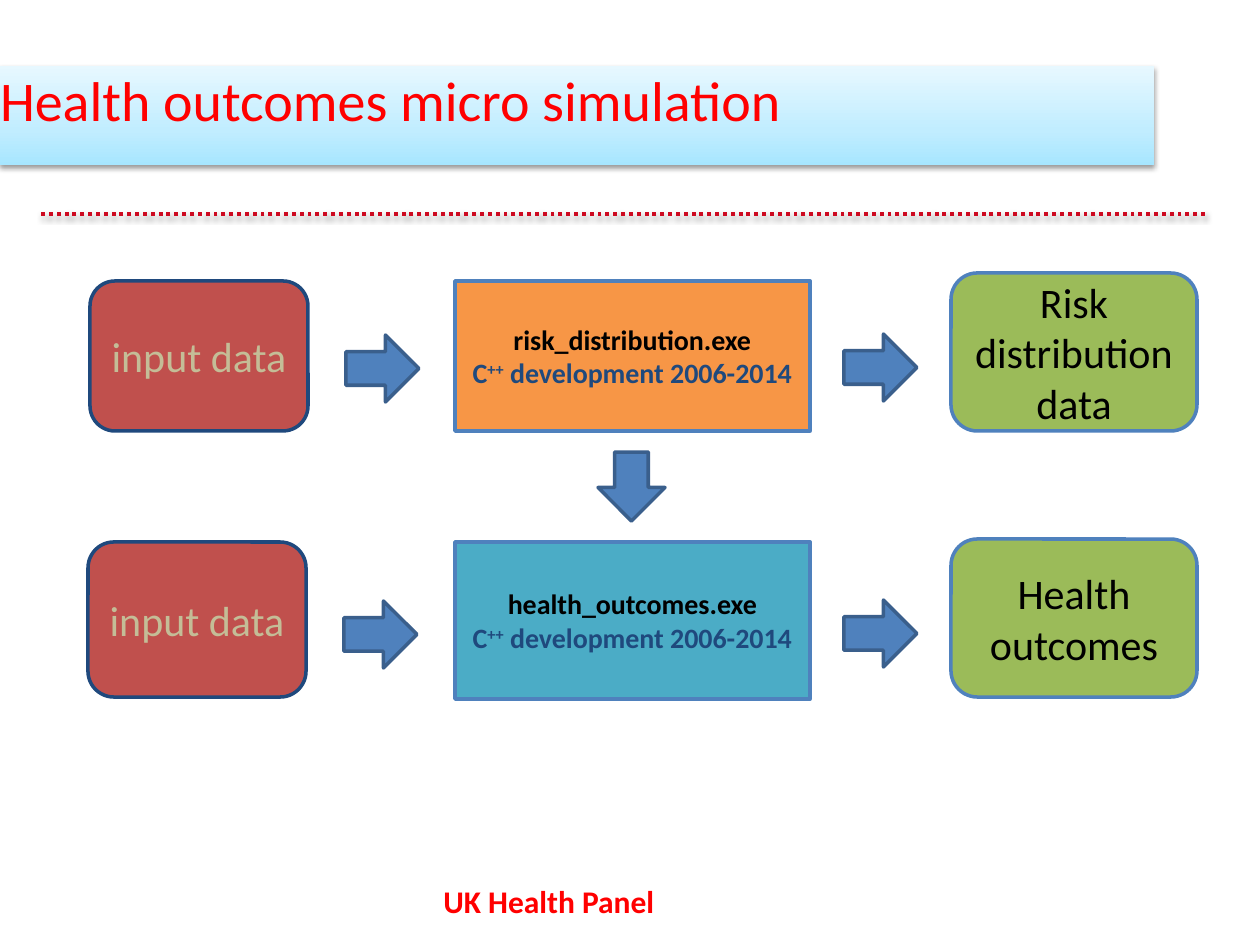
import pptx
import pptx.util
import pptx.dml.color
import pptx.oxml
import pptx.oxml.ns
from pptx.enum.dml import MSO_LINE
from pptx.enum.shapes import MSO_CONNECTOR, MSO_SHAPE
from pptx.enum.text import MSO_ANCHOR, MSO_AUTO_SIZE, PP_ALIGN

EMU_PER_PX = 914400 / 126
FONT = "Calibri"
RED, NAVY, BLUE, BLACK = "FF0000", "1F497D", "4F81BD", "000000"
ARROW_LINE = "3A5F8C"
NAMESPACE = pptx.oxml.ns.nsdecls("a")
SOFT_SHADOW = (
    f'<a:effectLst {NAMESPACE}><a:outerShdw blurRad="39370" dist="20320" dir="5400000" '
    'rotWithShape="0"><a:srgbClr val="000000"><a:alpha val="38000"/></a:srgbClr>'
    "</a:outerShdw></a:effectLst>"
)


def px(*lengths):
    return [pptx.util.Emu(round(length * EMU_PER_PX)) for length in lengths]


def color(value):
    return pptx.dml.color.RGBColor.from_string(value)


def format_font(font, size, value, bold=False):
    font.name = FONT
    font.size = pptx.util.Pt(size)
    font.bold = bold
    font.color.rgb = color(value)


def append_properties(shape, xml):
    shape._element.spPr.append(pptx.oxml.parse_xml(xml))


def add_block(slide, kind, box, fill, line):
    shape = slide.shapes.add_shape(kind, *px(*box))
    shape.shadow.inherit = False
    shape.fill.solid()
    shape.fill.fore_color.rgb = color(fill)
    shape.line.color.rgb = color(line)
    shape.line.width = pptx.util.Pt(2)
    return shape


def add_arrow(slide, kind, box):
    add_block(slide, kind, box, BLUE, ARROW_LINE)


def add_data_box(slide, box, text, fill, line, text_color):
    shape = add_block(slide, MSO_SHAPE.ROUNDED_RECTANGLE, box, fill, line)
    shape.text_frame.text = text
    shape.text_frame.vertical_anchor = MSO_ANCHOR.MIDDLE
    paragraph = shape.text_frame.paragraphs[0]
    paragraph.alignment = PP_ALIGN.CENTER
    format_font(paragraph.runs[0].font, 24, text_color)


def add_program(slide, box, name, fill):
    shape = add_block(slide, MSO_SHAPE.FLOWCHART_PROCESS, box, fill, BLUE)
    frame = shape.text_frame
    frame.vertical_anchor = MSO_ANCHOR.MIDDLE
    frame.text = name
    language = frame.add_paragraph()
    for text in ("C", "++", " development 2006-2014"):
        language.add_run().text = text
    for paragraph, value in zip(frame.paragraphs, (BLACK, NAVY)):
        paragraph.alignment = PP_ALIGN.CENTER
        for run in paragraph.runs:
            format_font(run.font, 16, value, bold=True)
    language.runs[1].font._element.set("baseline", "30000")


def add_title(slide, box):
    title = slide.shapes.title
    title.left, title.top, title.width, title.height = px(*box)
    stops = "".join(
        f'<a:gs pos="{position}000"><a:srgbClr val="{value}"/></a:gs>'
        for position, value in ((0, "A7E6FF"), (35, "C1EDFF"), (100, "E7F8FF"))
    )
    append_properties(
        title,
        f"<a:gradFill {NAMESPACE}><a:gsLst>{stops}</a:gsLst>"
        '<a:lin ang="16200000" scaled="0"/></a:gradFill>',
    )
    append_properties(title, SOFT_SHADOW)
    frame = title.text_frame
    frame.text = "Health outcomes micro simulation"
    frame.auto_size = MSO_AUTO_SIZE.NONE
    frame.vertical_anchor = MSO_ANCHOR.TOP
    frame.margin_left = frame.margin_right = frame.margin_top = frame.margin_bottom = 0
    frame.paragraphs[0].alignment = PP_ALIGN.LEFT
    format_font(frame.paragraphs[0].runs[0].font, 32, RED)


def add_divider(slide, left, right, y):
    divider = slide.shapes.add_connector(MSO_CONNECTOR.STRAIGHT, *px(right, y, left, y))
    divider.line.color.rgb = color("CD0920")
    divider.line.width = pptx.util.Pt(2.25)
    divider.line.dash_style = MSO_LINE.ROUND_DOT
    append_properties(divider, SOFT_SHADOW)


def add_stage(slide, left, top, input_box, arrow_tops, program, program_height,
              program_fill, result, result_top, result_height):
    """One row: input data, program and result, joined by arrows."""
    input_left, input_height = input_box
    add_data_box(slide, (left + input_left, top, 218, input_height), "input data",
                 "C0504D", NAVY, "C4BD97")
    add_program(slide, (left + 367, top, 355, program_height), program, program_fill)
    add_data_box(slide, (left + 863, top + result_top, 246, result_height), result,
                 "9BBB59", BLUE, BLACK)
    for arrow_left, arrow_top in zip((input_left + 256, 756), arrow_tops):
        add_arrow(slide, MSO_SHAPE.RIGHT_ARROW,
                  (left + arrow_left, top + arrow_top, 73, 67))


def add_footer(slide, box):
    footer = slide.shapes.add_textbox(*px(*box))
    footer.text_frame.word_wrap = True
    footer.text_frame.text = "UK Health Panel"
    format_font(footer.text_frame.paragraphs[0].runs[0].font, 18, RED, bold=True)


def main():
    presentation = pptx.Presentation()
    presentation.slide_width, presentation.slide_height = px(1260, 945)
    slide = presentation.slides.add_slide(presentation.slide_layouts[5])
    add_divider(slide, 40, 1205, 214)
    add_title(slide, (0, 66, 1154, 99))
    add_stage(slide, 88, 281, (2, 150), (54, 53), "risk_distribution.exe", 150,
              "F79646", "Risk distribution data", -8, 158)
    add_arrow(slide, MSO_SHAPE.DOWN_ARROW, (598, 452, 67, 69))
    add_stage(slide, 88, 542, (0, 155), (59, 58), "health_outcomes.exe", 157,
              "4BACC6", "Health outcomes", -3, 158)
    add_footer(slide, (431, 876, 399, 50))
    presentation.save("out.pptx")


if __name__ == "__main__":
    main()
